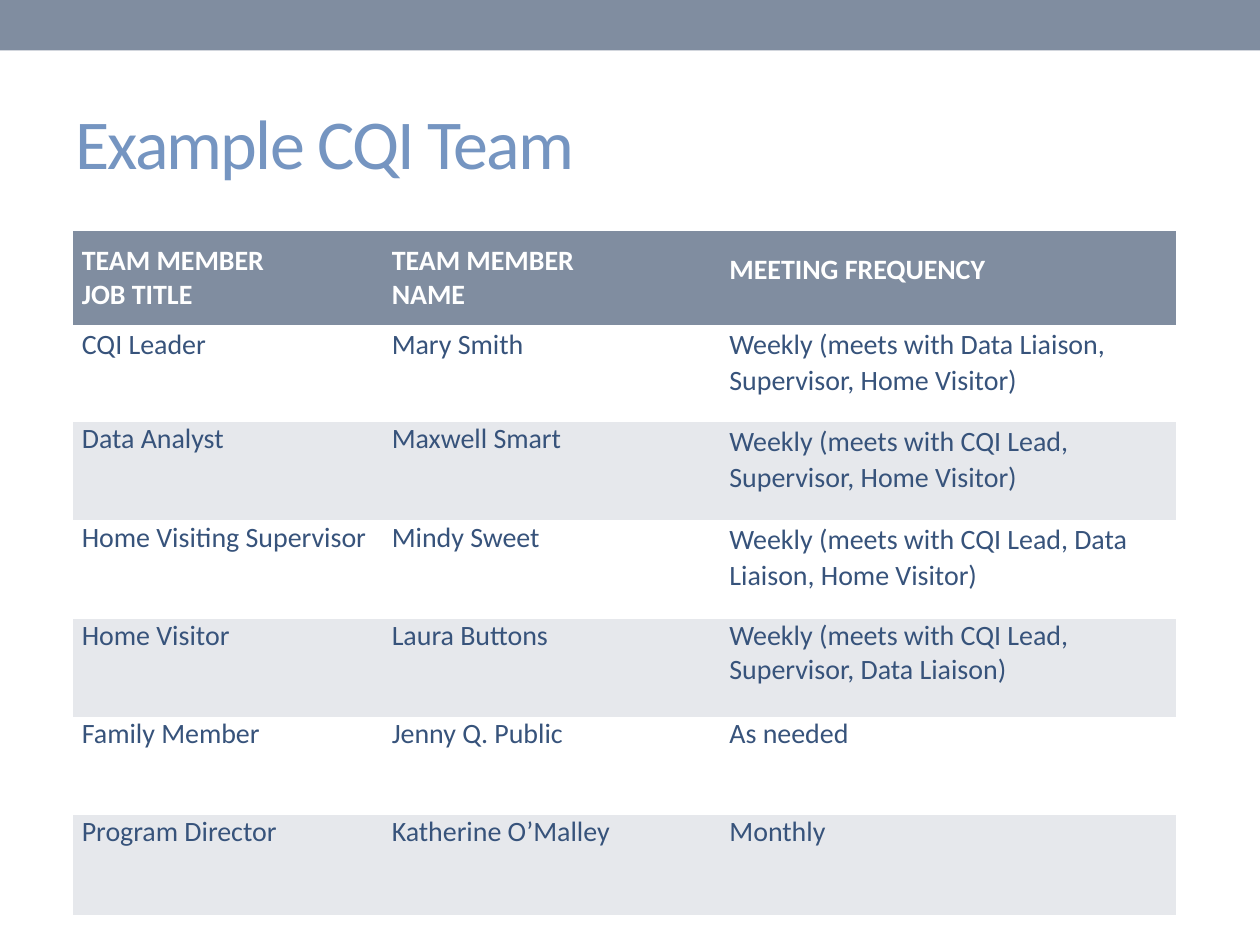
from pptx import Presentation
from pptx.dml.color import RGBColor
from pptx.enum.shapes import MSO_SHAPE
from pptx.enum.text import MSO_ANCHOR
from pptx.oxml.ns import qn
from pptx.util import Inches, Pt

SLATE = RGBColor(0x80, 0x8D, 0xA0)
TITLE_BLUE = RGBColor(0x75, 0x95, 0xC1)
TEXT_BLUE = RGBColor(0x37, 0x53, 0x7B)
BAND_GRAY = RGBColor(0xE6, 0xE8, 0xEC)
WHITE = RGBColor(0xFF, 0xFF, 0xFF)
FONT = "Calibri"
NO_STYLE_NO_GRID = "{2D5ABB26-0587-4C30-8999-92F81FD0307C}"

COLUMN_WIDTHS = [2.46, 2.68, 3.61]
ROW_HEIGHTS = [0.75, 0.77, 0.78, 0.78, 0.78, 0.78, 0.79]
TEAM = [
    ("TEAM MEMBER\nJOB TITLE", "TEAM MEMBER\nNAME", "MEETING FREQUENCY"),
    ("CQI Leader", "Mary Smith",
     "Weekly (meets with Data Liaison, Supervisor, Home Visitor)"),
    ("Data Analyst", "Maxwell Smart",
     "Weekly (meets with CQI Lead, Supervisor, Home Visitor)"),
    ("Home Visiting Supervisor", "Mindy Sweet",
     "Weekly (meets with CQI Lead, Data Liaison, Home Visitor)"),
    ("Home Visitor", "Laura Buttons",
     "Weekly (meets with CQI Lead, Supervisor, Data Liaison)"),
    ("Family Member", "Jenny Q. Public", "As needed"),
    ("Program Director", "Katherine O’Malley", "Monthly"),
]
LINE_SPACING = {
    (0, 2): Pt(10),
    (1, 0): 1.07,
    (1, 1): 1.07,
    (1, 2): 1.07,
    (2, 2): 1.07,
    (3, 2): 1.07,
}


def set_font(paragraph, size, color, bold=False):
    font = paragraph.font
    font.name = FONT
    font.size = Pt(size)
    font.bold = bold
    font.color.rgb = color


presentation = Presentation()
presentation.slide_width = Inches(10)
presentation.slide_height = Inches(7.5)
slide = presentation.slides.add_slide(presentation.slide_layouts[6])

top_bar = slide.shapes.add_shape(
    MSO_SHAPE.RECTANGLE, Inches(0), Inches(0), Inches(10), Inches(0.4))
top_bar.shadow.inherit = False
top_bar.fill.solid()
top_bar.fill.fore_color.rgb = SLATE
top_bar.line.fill.background()

title = slide.shapes.add_textbox(Inches(0.5), Inches(0.58), Inches(9), Inches(1.08))
title.text_frame.word_wrap = True
title.text_frame.vertical_anchor = MSO_ANCHOR.MIDDLE
title_paragraph = title.text_frame.paragraphs[0]
title_run = title_paragraph.add_run()
title_run.text = "Example CQI Team"
title_run._r.get_or_add_rPr().set("spc", "-100")
set_font(title_paragraph, 40, TITLE_BLUE)

table = slide.shapes.add_table(
    len(TEAM), len(COLUMN_WIDTHS),
    Inches(0.58), Inches(1.83), Inches(8.75), Inches(5.43)).table
table._tbl.tblPr.find(qn("a:tableStyleId")).text = NO_STYLE_NO_GRID
table.horz_banding = False
for column, width in zip(table.columns, COLUMN_WIDTHS):
    column.width = Inches(width)

for row_index, (height, texts) in enumerate(zip(ROW_HEIGHTS, TEAM)):
    table.rows[row_index].height = Inches(height)
    is_header = row_index == 0
    for column_index, text in enumerate(texts):
        cell = table.cell(row_index, column_index)
        cell.margin_left = cell.margin_right = Inches(0.07)
        cell.margin_top = cell.margin_bottom = Inches(0)
        cell.vertical_anchor = MSO_ANCHOR.MIDDLE if is_header else MSO_ANCHOR.TOP
        if row_index % 2:
            cell.fill.background()
        else:
            cell.fill.solid()
            cell.fill.fore_color.rgb = SLATE if is_header else BAND_GRAY
        cell.text_frame.text = text
        for paragraph in cell.text_frame.paragraphs:
            paragraph.line_spacing = LINE_SPACING.get((row_index, column_index))
            set_font(paragraph, 16, WHITE if is_header else TEXT_BLUE, is_header)

presentation.save("out.pptx")
